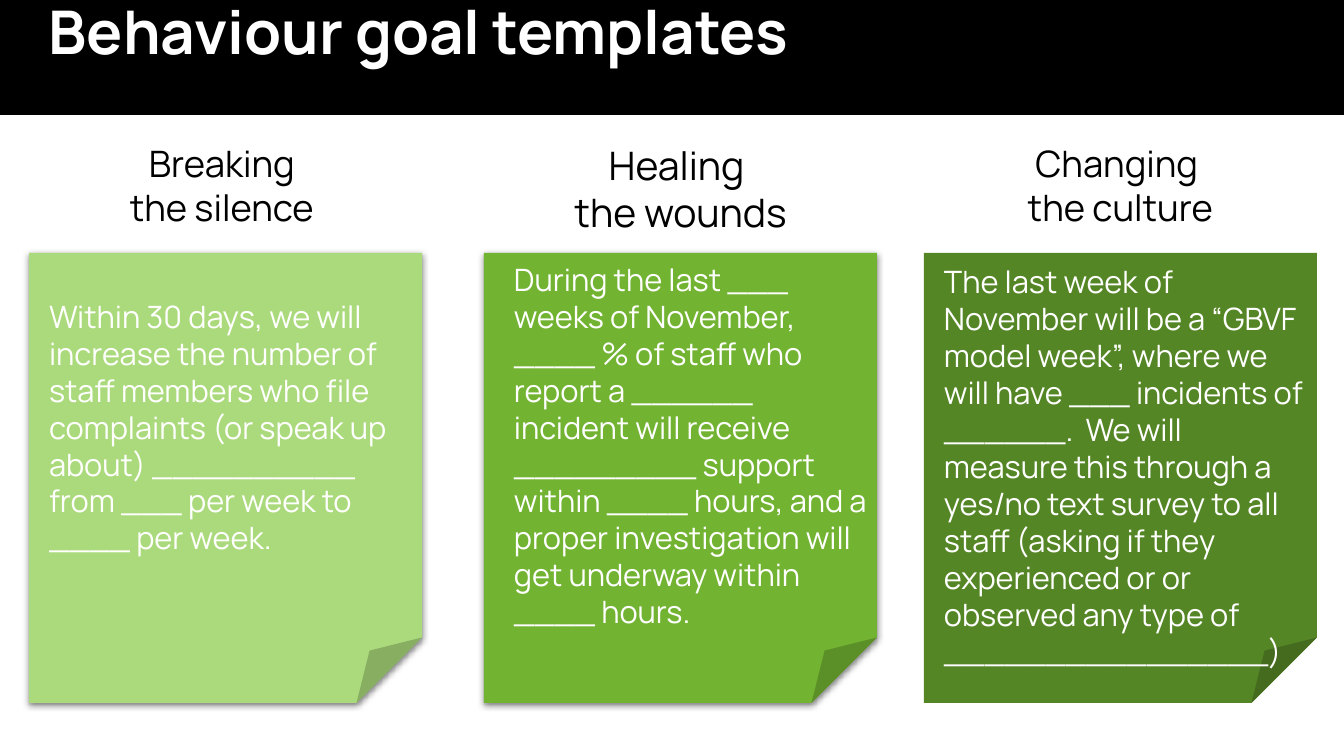
from dataclasses import dataclass

from lxml import etree
from pptx import Presentation
from pptx import util as u
from pptx.dml.color import RGBColor
from pptx.enum import shapes, text
from pptx.oxml.ns import qn

PX = 914400 / 100.8  # EMU per px
FONT = "Manrope"
BLACK = RGBColor(0, 0, 0)
WHITE = RGBColor(255, 255, 255)
LIGHT_GREEN = RGBColor(0xAA, 0xDA, 0x7B)
MID_GREEN = RGBColor(0x72, 0xB3, 0x32)
DARK_GREEN = RGBColor(0x55, 0x86, 0x26)

COLUMN_W = 393
HEADING_TOP, HEADING_H = 131, 60
NOTE_TOP, NOTE_H = 253, 450
PAD = 10
TOP, MIDDLE = text.MSO_ANCHOR.TOP, text.MSO_ANCHOR.MIDDLE


@dataclass
class Goal:
    left: int
    heading: list[str]
    heading_size: int
    goal: str
    fill: RGBColor
    indent: int = 10
    bottom_pad: int = PAD
    anchor: text.MSO_ANCHOR = MIDDLE
    shadow: bool = True


GOALS = [
    Goal(29, ["Breaking ", "the silence "], 26,
         "Within 30 days, we will increase the number of staff members who file "
         "complaints (or speak up about) __________ from ___ per week to "
         "____ per week.",
         LIGHT_GREEN, bottom_pad=PAD + 37),
    Goal(484, ["Healing ", "the wounds"], 28,
         "During the last ___ weeks of November, ____ % of staff who report a "
         "______ incident will receive _________ support within ____ hours, and a "
         "proper investigation will get underway within ____ hours.",
         MID_GREEN, indent=20),
    Goal(924, ["Changing ", "the culture"], 26,
         "The last week of November will be a “GBVF model week”, where we will "
         "have ___ incidents of ______.  We will measure this through a yes/no "
         "text survey to all staff (asking if they experienced or or observed any "
         "type of ________________)",
         DARK_GREEN, anchor=TOP, shadow=False),
]


def px(n: int) -> u.Emu:
    return u.Emu(round(n * PX))


def box(left: int, top: int, width: int, height: int) -> list[u.Emu]:
    return [px(n) for n in (left, top, width, height)]


def add_block(s, left: int, top: int, width: int, height: int, fill: RGBColor,
              kind=shapes.MSO_SHAPE.RECTANGLE):
    sp = s.shapes.add_shape(kind, *box(left, top, width, height))
    sp.shadow.inherit = False
    sp.fill.solid()
    sp.fill.fore_color.rgb = fill
    sp.line.fill.background()
    return sp


def add_shadow(sp) -> None:
    effects = sp._element.spPr.find(qn("a:effectLst"))
    outer = etree.SubElement(effects, qn("a:outerShdw"), blurRad=str(u.Pt(4.5)),
                             dist=str(u.Pt(1.5)), dir="5400000", rotWithShape="0")
    color = etree.SubElement(outer, qn("a:srgbClr"), val="000000")
    etree.SubElement(color, qn("a:alpha"), val="50000")


def write(sp, lines: list[str], size: int, color: RGBColor, pads: tuple,
          align=text.PP_ALIGN.LEFT, anchor=TOP, bold: bool = False,
          spacing: float = 1.0) -> None:
    """Fill a shape with text; pads are left, top, right, bottom in px."""
    tf = sp.text_frame
    tf.word_wrap = True
    tf.vertical_anchor = anchor
    tf.margin_left, tf.margin_top, tf.margin_right, tf.margin_bottom = map(px, pads)
    tf.text = "\n".join(lines)
    for p in tf.paragraphs:
        p.alignment = align
        p.line_spacing = spacing
        p.font.name = FONT
        p.font.size = u.Pt(size)
        p.font.bold = bold
        p.font.color.rgb = color


def add_goal(s, g: Goal) -> None:
    note = add_block(s, g.left, NOTE_TOP, COLUMN_W, NOTE_H, g.fill,
                     shapes.MSO_SHAPE.FOLDED_CORNER)
    if g.shadow:
        add_shadow(note)
    write(note, [g.goal], 22, WHITE, (PAD + g.indent, PAD, PAD, g.bottom_pad),
          anchor=g.anchor)

    heading = s.shapes.add_textbox(*box(g.left, HEADING_TOP, COLUMN_W, HEADING_H))
    write(heading, g.heading, g.heading_size, BLACK, (PAD,) * 4,
          align=text.PP_ALIGN.CENTER)


def main() -> None:
    prs = Presentation()
    prs.slide_width, prs.slide_height = px(1344), px(756)
    s = prs.slides.add_slide(prs.slide_layouts[6])

    # Title band
    add_block(s, 0, 0, 1344, 115, BLACK)
    title = s.shapes.add_textbox(*box(41, 0, 1033, 95))
    write(title, ["Behaviour goal templates"], 43, WHITE, (8,) * 4,
          bold=True, spacing=0.8)

    # One heading and note per goal
    for g in GOALS:
        add_goal(s, g)

    prs.save("out.pptx")


if __name__ == "__main__":
    main()
